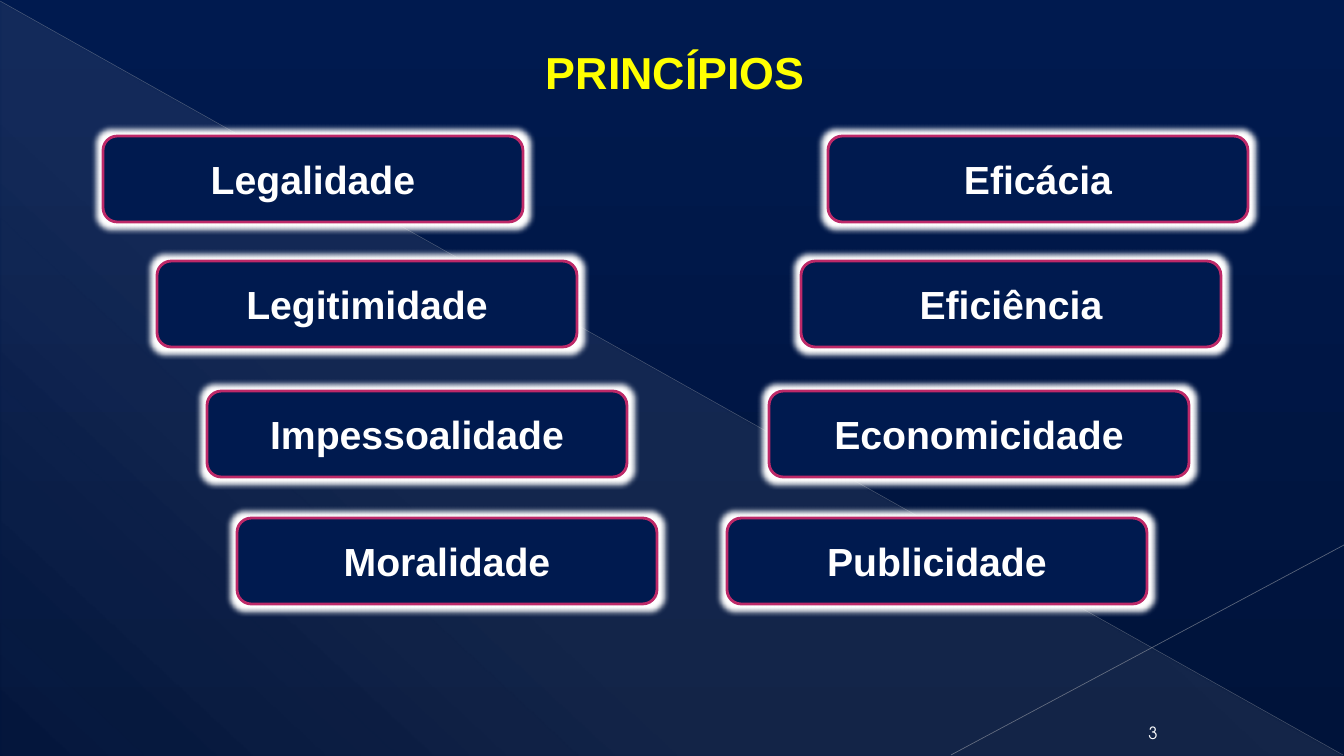
import lxml.etree
import pptx
import pptx.dml.color
import pptx.enum.shapes
import pptx.enum.text
import pptx.oxml
import pptx.oxml.ns
import pptx.util

RGB = pptx.dml.color.RGBColor
SHAPE = pptx.enum.shapes.MSO_SHAPE
ANCHOR = pptx.enum.text.MSO_ANCHOR
CENTER = pptx.enum.text.PP_ALIGN.CENTER
Pt = pptx.util.Pt

NAVY = RGB(0x00, 0x1A, 0x4F)
DEEP_NAVY = RGB(0x00, 0x13, 0x3A)
YELLOW = RGB(0xFF, 0xFF, 0x00)
WHITE = RGB(0xFF, 0xFF, 0xFF)
MAGENTA = RGB(0xBD, 0x29, 0x68)
VEIL = RGB(0xD2, 0xD2, 0xD2)
LONG_RAY = RGB(0xBF, 0xBF, 0xBF)
SHORT_RAY = RGB(0xC6, 0xC6, 0xC6)

SLIDE_W, SLIDE_H = 1344, 756
CARD_W, CARD_H = 420, 86
GLOW_RADIUS = 11
CARD_TOPS = (136, 261, 391, 518)
LEFT_CARDS = (("Legalidade", 103), ("Legitimidade", 157),
              ("Impessoalidade", 207), ("Moralidade", 237))
RIGHT_CARDS = (("Eficácia", 828), ("Eficiência", 801),
               ("Economicidade", 769), ("Publicidade", 727))

TITLE_FONT = {"name": "Arial", "size": Pt(32), "bold": True}
CARD_FONT = {"name": "Arial", "size": Pt(28), "bold": True}
NUMBER_FONT = {"name": "TeX Gyre Adventor", "size": Pt(12), "bold": False}


def px(length):
    return round(length * 914400 / 100.8)


def box_emu(box):
    return [px(length) for length in box]


def add_xml(parent, tag, **attributes):
    return lxml.etree.SubElement(parent, pptx.oxml.ns.qn(tag), attributes)


def add_color(parent, color, percent):
    srgb = add_xml(parent, "a:srgbClr", val=str(color))
    add_xml(srgb, "a:alpha", val=str(percent * 1000))


def write_text(frame, text, font_format, color, anchor, space_after=0):
    frame.word_wrap = True
    frame.vertical_anchor = anchor
    paragraph = frame.paragraphs[0]
    paragraph.alignment = CENTER
    paragraph.space_after = Pt(space_after)
    run = paragraph.add_run()
    run.text = text
    for key, value in font_format.items():
        setattr(run.font, key, value)
    run.font.color.rgb = color


def paint_background(slide):
    fill = slide.background.fill
    fill.gradient()
    fill.gradient_angle = 270
    for stop, color in zip(fill.gradient_stops, (NAVY, DEEP_NAVY)):
        stop.color.rgb = color


def add_veil(slide, box):
    """Translucent triangle fading towards the lower left corner."""
    veil = slide.shapes.add_shape(SHAPE.RIGHT_TRIANGLE, *box_emu(box))
    veil.shadow.inherit = False
    veil.line.fill.background()
    gradient = pptx.oxml.parse_xml(
        f'<a:gradFill {pptx.oxml.ns.nsdecls("a")} rotWithShape="1"/>')
    stops = add_xml(gradient, "a:gsLst")
    for position, percent in ((0, 10), (70, 8), (100, 1)):
        stop = add_xml(stops, "a:gs", pos=str(position * 1000))
        add_color(stop, VEIL, percent)
    add_xml(gradient, "a:lin", ang=str(133 * 60000), scaled="0")
    geometry = veil.element.spPr.find(pptx.oxml.ns.qn("a:prstGeom"))
    geometry.addnext(gradient)


def add_ray(slide, ends, color, width, percent):
    ray = slide.shapes.add_connector(
        pptx.enum.shapes.MSO_CONNECTOR.STRAIGHT, *box_emu(ends))
    ray.line.width = Pt(width)
    ray.line.color.rgb = color
    srgb = ray.element.spPr.find(".//" + pptx.oxml.ns.qn("a:srgbClr"))
    add_xml(srgb, "a:alpha", val=str(percent * 1000))
    add_xml(ray.element.spPr, "a:effectLst")


def add_decoration(slide, width, height):
    add_veil(slide, (1, 2, width - 2, height - 2))
    add_ray(slide, (0, 1, width - 1, height - 1), LONG_RAY, 0.39, 35)
    add_ray(slide, (width, 545, 951, height - 1), SHORT_RAY, 0.47, 45)


def add_title(slide, box):
    title = slide.shapes.title
    title.left, title.top, title.width, title.height = box_emu(box)
    title.text_frame.auto_size = pptx.enum.text.MSO_AUTO_SIZE.NONE
    title.text_frame.margin_top = px(11)
    write_text(title.text_frame, "PRINCÍPIOS", TITLE_FONT, YELLOW, ANCHOR.TOP)
    title.element.getparent().append(title.element)  # in front of the veil


def add_page_number(slide, box):
    number = slide.shapes.add_textbox(*box_emu(box))
    write_text(number.text_frame, "3", NUMBER_FONT, WHITE, ANCHOR.BOTTOM)


def add_card(slide, principle, box):
    card = slide.shapes.add_shape(SHAPE.ROUNDED_RECTANGLE, *box_emu(box))
    card.shadow.inherit = False
    card.fill.solid()
    card.fill.fore_color.rgb = NAVY
    card.line.color.rgb = MAGENTA
    card.line.width = Pt(2)
    effects = card.element.spPr.find(pptx.oxml.ns.qn("a:effectLst"))
    glow = add_xml(effects, "a:glow", rad=str(px(GLOW_RADIUS)))
    add_color(glow, WHITE, 100)
    write_text(card.text_frame, principle, CARD_FONT, WHITE, ANCHOR.MIDDLE, 12)


def add_card_column(slide, cards):
    for (principle, left), top in zip(cards, CARD_TOPS):
        add_card(slide, principle, (left, top, CARD_W, CARD_H))


def main():
    deck = pptx.Presentation()
    deck.slide_width, deck.slide_height = px(SLIDE_W), px(SLIDE_H)
    slide = deck.slides.add_slide(deck.slide_layouts[5])
    paint_background(slide)
    add_decoration(slide, SLIDE_W, SLIDE_H)
    add_title(slide, (29, 34, 1293, 80))
    add_page_number(slide, (1116, 715, 74, 33))
    for cards in (LEFT_CARDS, RIGHT_CARDS):
        add_card_column(slide, cards)
    deck.save("out.pptx")


if __name__ == "__main__":
    main()
